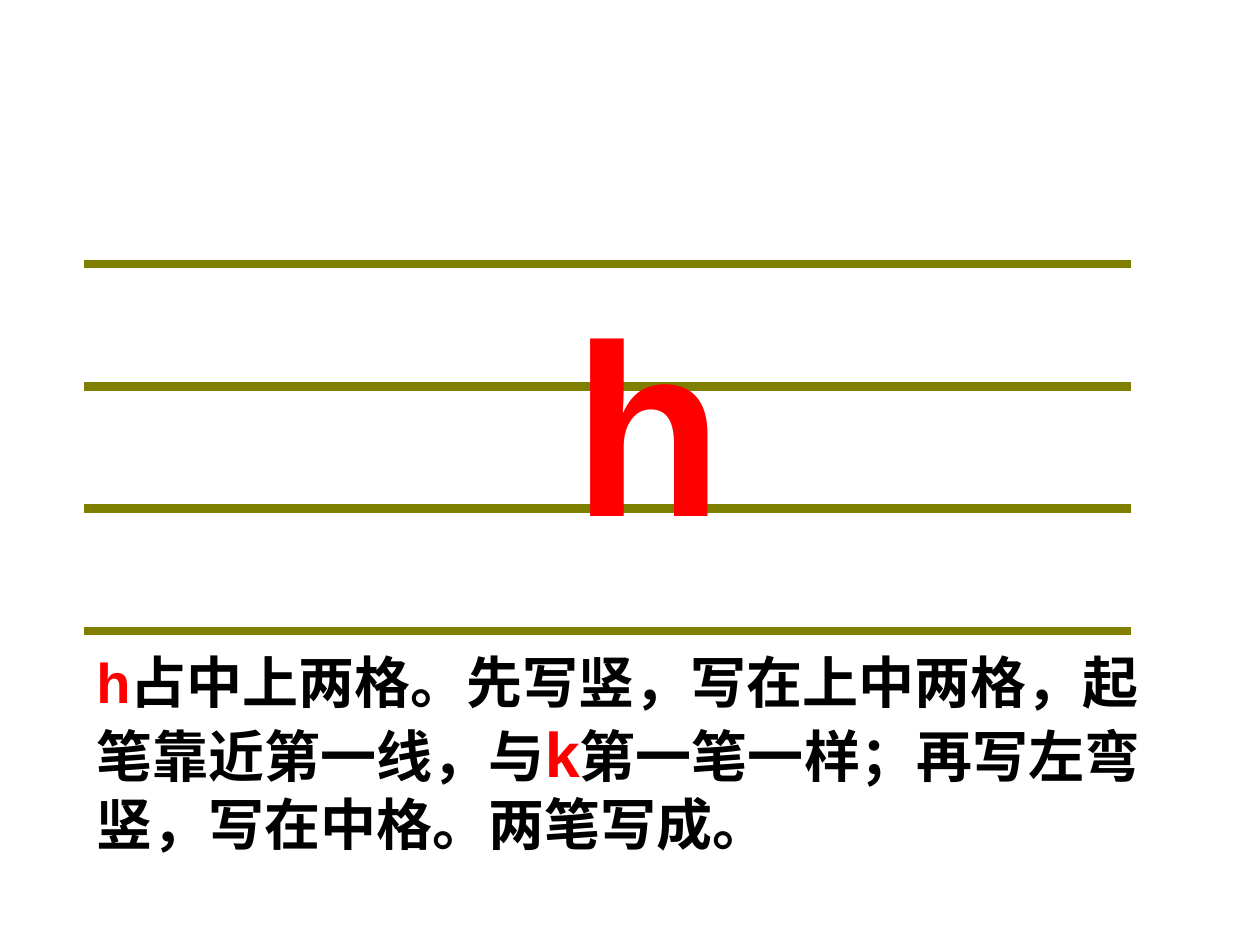
from lxml.etree import SubElement
from pptx import Presentation
from pptx.dml.color import RGBColor as Rgb
from pptx.enum.shapes import MSO_CONNECTOR as Link
from pptx.enum.text import MSO_AUTO_SIZE as Fit
from pptx.oxml.ns import qn
from pptx.util import Emu, Pt

SCALE = 914400 / 126
LATIN, HAN = "Arial", "Noto Sans CJK SC"
RED, BLACK, OLIVE = "FF0000", "000000", "808000"
LEFT, RIGHT, TOP, LOW = 84, 1131, 264, 631


def px(n):
    """Turn px into EMU."""
    return Emu(round(n * SCALE))


def tint(code):
    """Turn a hex string into a colour."""
    return Rgb.from_string(code)


def add_rule(group, y):
    """Draw one line of the writing staff."""
    rule = group.shapes.add_connector(
        Link.STRAIGHT, px(LEFT), px(y), px(RIGHT), px(y))
    rule.line.color.rgb = tint(OLIVE)
    rule.line.width = Pt(5)
    SubElement(rule._element.spPr, qn("a:effectLst"))


def add_staff(slide, count=4):
    """Draw the evenly spaced staff."""
    group = slide.shapes.add_group_shape()
    for i in range(count):
        add_rule(group, TOP + (LOW - TOP) * i / (count - 1))


def add_text(slide, box, parts, wrap):
    """Add one bold paragraph made of (text, size, face, colour) parts."""
    frame = slide.shapes.add_textbox(*map(px, box)).text_frame
    frame.word_wrap = wrap
    frame.auto_size = Fit.SHAPE_TO_FIT_TEXT
    for text, size, face, color in parts:
        run = frame.paragraphs[0].add_run()
        run.text = text
        font = run.font
        font.size, font.bold, font.name = Pt(size), True, face
        font.color.rgb = tint(color)
        SubElement(font._element, qn("a:ea")).set("typeface", HAN)


def main():
    """Build the slide."""
    deck = Presentation()
    deck.slide_width, deck.slide_height = px(1260), px(945)
    slide = deck.slides.add_slide(deck.slide_layouts[6])
    add_staff(slide)
    add_text(slide, (561, 265, 175, 306), [("h", 140, LATIN, RED)], False)
    add_text(slide, (LEFT, 641, 1091, 224), [
        ("h", 32, LATIN, RED),
        ("占中上两格。先写竖，写在上中两格，起笔靠近第一线，与", 32, HAN, BLACK),
        ("k", 36, LATIN, RED),
        ("第一笔一样；再写左弯竖，写在中格。两笔写成。", 32, HAN, BLACK),
    ], True)
    deck.save("out.pptx")


if __name__ == "__main__":
    main()
